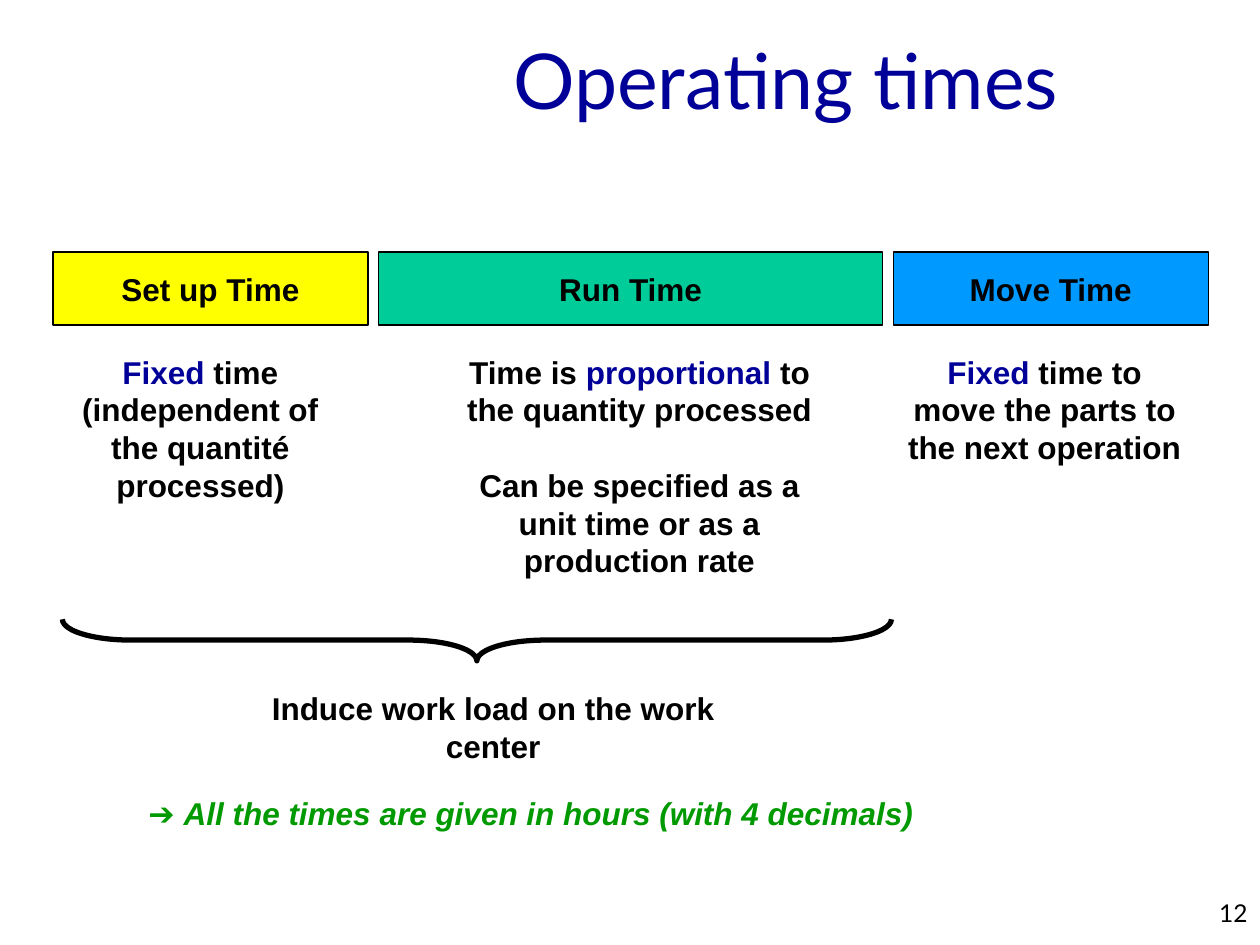
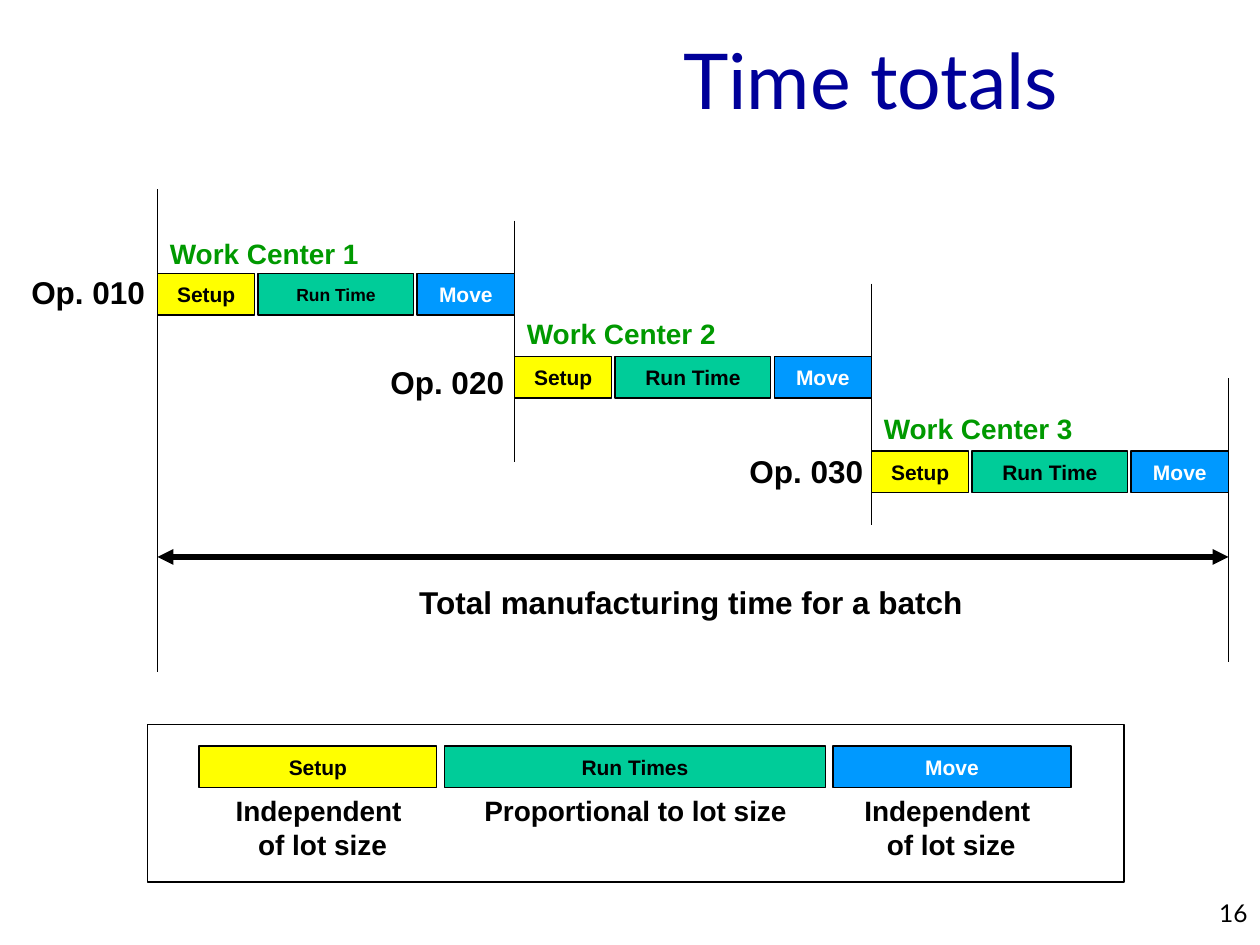
from lxml import etree
from pptx import Presentation
from pptx.dml.color import RGBColor
from pptx.enum.shapes import MSO_CONNECTOR, MSO_SHAPE
from pptx.enum.text import MSO_ANCHOR, PP_ALIGN
from pptx.oxml.ns import qn
from pptx.util import Inches, Pt

LEFT, CENTER, RIGHT = PP_ALIGN.LEFT, PP_ALIGN.CENTER, PP_ALIGN.RIGHT
MIDDLE, TOP = MSO_ANCHOR.MIDDLE, MSO_ANCHOR.TOP
RECTANGLE, LEFT_BRACE = MSO_SHAPE.RECTANGLE, MSO_SHAPE.LEFT_BRACE
STRAIGHT = MSO_CONNECTOR.STRAIGHT

BLACK = RGBColor(0x00, 0x00, 0x00)
WHITE = RGBColor(0xFF, 0xFF, 0xFF)
NAVY = RGBColor(0x00, 0x00, 0x99)
GREEN = RGBColor(0x00, 0x99, 0x00)
YELLOW = RGBColor(0xFF, 0xFF, 0x00)
TEAL = RGBColor(0x00, 0xCC, 0x99)
BLUE = RGBColor(0x00, 0x99, 0xFF)

TITLE_FONT, BODY_FONT = "Lato", "Arial"
THIN, THICK = 0.75, 3

# Every time bar has the same proportions: setup, run, move
SEGMENT_UNITS = (30, 48, 30)
SEGMENT_FILLS = (YELLOW, TEAL, BLUE)
GAP_UNITS = 1
BAR_UNITS = sum(SEGMENT_UNITS) + 2 * GAP_UNITS

# Operating times: each paragraph is a list of (text, colour) runs
TIME_NAMES = ("Set up Time", "Run Time", "Move Time")
TIME_NOTES = [  # left, width, height, paragraphs
    (0.5, 2.18, 1.3, [
        [("Fixed", NAVY), (" time", BLACK)],
        [("(independent of the quantité processed)", BLACK)]]),
    (3.58, 2.99, 1.9, [
        [("Time is", BLACK), (" proportional", NAVY),
         (" to the quantity processed", BLACK)],
        [("Can be specified as a unit time or as a production rate", BLACK)]]),
    (7.08, 2.42, 1, [
        [("Fixed", NAVY),
         (" time to move the parts to the next operation", BLACK)]]),
]
WORK_LOAD = "Induce work load on the work center"
HOURS_NOTE = [("➔ ", GREEN),
              ("All the times are given in hours (with 4 decimals)", GREEN)]

# Time totals
OPERATIONS = [  # label, label top, work center, its top, bar top, run size
    ("Op. 010", 2.12, "Work Center 1", 1.83, 2.17, 10),
    ("Op. 020", 2.83, "Work Center 2", 2.46, 2.83, 12),
    ("Op. 030", 3.54, "Work Center 3", 3.22, 3.58, 12),
]
BOUNDARIES = [(1.5, 5.33), (1.75, 3.67), (2.25, 4.17), (3, 5.25)]
TOTAL_TIME = "Total manufacturing time for a batch"
LEGEND_CAPTIONS = [  # left, width, height, text
    (1.77, 1.58, 0.64, "Independent \vof lot size"),
    (6.76, 1.58, 0.64, "Independent \vof lot size"),
    (3.74, 2.61, 0.37, "Proportional to lot size"),
]
CHAIN_LEFT, CHAIN_RIGHT = 1.25, 9.75
OPERATION_WIDTH = (CHAIN_RIGHT - CHAIN_LEFT) / len(OPERATIONS)


def format_paragraph(paragraph, size, color, align, font=BODY_FONT, bold=True):
    paragraph.alignment = align
    for run in paragraph.runs:
        run.font.name = font
        run.font.size = Pt(size)
        run.font.bold = bold
        run.font.color.rgb = color


def add_box(slide, at, wrap=False, anchor=TOP):
    text_frame = slide.shapes.add_textbox(*map(Inches, at)).text_frame
    text_frame.word_wrap = wrap
    text_frame.vertical_anchor = anchor
    return text_frame


def add_label(slide, at, text, size=18, color=BLACK, align=LEFT):
    paragraph = add_box(slide, at).paragraphs[0]
    paragraph.text = text
    format_paragraph(paragraph, size, color, align)


def fill_runs(paragraph, runs, align):
    for text, _ in runs:
        paragraph.add_run().text = text
    format_paragraph(paragraph, 18, BLACK, align)
    for run, (_, color) in zip(paragraph.runs, runs):
        run.font.color.rgb = color


def add_outlined(shapes, kind, at, fill=None, width=THIN):
    shape = shapes.add_shape(kind, *map(Inches, at))
    shape.shadow.inherit = False
    if fill is None:
        shape.fill.background()
    else:
        shape.fill.solid()
        shape.fill.fore_color.rgb = fill
    shape.line.color.rgb = BLACK
    shape.line.width = Pt(width)
    return shape


def add_time_bar(slide, left, top, width, height, names, sizes, move_color):
    """Draw the three segments of a time bar as one group."""
    shapes = slide.shapes.add_group_shape().shapes
    unit = width / BAR_UNITS
    colors = (BLACK, BLACK, move_color)
    for name, size, color, units, fill in zip(
            names, sizes, colors, SEGMENT_UNITS, SEGMENT_FILLS):
        segment = add_outlined(
            shapes, RECTANGLE, (left, top, units * unit, height), fill)
        text_frame = segment.text_frame
        text_frame.text = name
        text_frame.word_wrap = False
        text_frame.vertical_anchor = MIDDLE
        format_paragraph(text_frame.paragraphs[0], size, color, CENTER)
        left += (units + GAP_UNITS) * unit


def add_line(slide, x1, y1, x2, y2, width=THIN, arrows=False):
    line = slide.shapes.add_connector(STRAIGHT, *map(Inches, (x1, y1, x2, y2)))
    line.line.color.rgb = BLACK
    line.line.width = Pt(width)
    properties = line.element.spPr
    etree.SubElement(properties, qn("a:effectLst"))
    if arrows:
        outline = properties.find(qn("a:ln"))
        for end in ("a:headEnd", "a:tailEnd"):
            etree.SubElement(outline, qn(end), type="triangle")


def start_slide(presentation, title, number):
    slide = presentation.slides.add_slide(presentation.slide_layouts[6])
    for text, at, size, color, anchor in (
            (number, (7.92, 7.08, 2.08, 0.25), 14, BLACK, TOP),
            (title, (0, 0, 8.5, 1.25), 44, NAVY, MIDDLE)):
        text_frame = add_box(slide, at, True, anchor)
        text_frame.text = text
        format_paragraph(text_frame.paragraphs[0], size, color, RIGHT,
                         TITLE_FONT, False)
    return slide


def build_operating_times(presentation):
    slide = start_slide(presentation, "Operating times", "12")
    add_time_bar(slide, 0.42, 2, 9.17, 0.58, TIME_NAMES, (18, 18, 18), BLACK)

    # Explanations under the bar
    for left, width, height, paragraphs in TIME_NOTES:
        text_frame = add_box(slide, (left, 2.75, width, height), wrap=True)
        for index, runs in enumerate(paragraphs):
            paragraph = (text_frame.add_paragraph() if index
                         else text_frame.paragraphs[0])
            fill_runs(paragraph, runs, CENTER)
    # One line of space before the remark on how run time is specified
    run_note = slide.shapes[-2].text_frame
    run_note.paragraphs[1].space_before = Pt(21.5)

    # Brace over the times that load the work center
    brace = add_outlined(slide.shapes, LEFT_BRACE, (3.62, 1.79, 0.33, 6.58),
                         width=THICK)
    brace.rotation = 270
    brace.adjustments[0] = 1.646
    add_label(slide, (1.65, 5.42, 4.53, 0.4), WORK_LOAD, align=CENTER)

    hours = add_box(slide, (1.08, 6.25, 6.33, 0.4)).paragraphs[0]
    fill_runs(hours, HOURS_NOTE, LEFT)
    hours.runs[1].font.italic = True


def build_time_totals(presentation):
    slide = start_slide(presentation, "Time totals", "16")

    # One step of the staircase per operation
    for index, operation in enumerate(OPERATIONS):
        label, label_top, center, center_top, bar_top, run_size = operation
        left = CHAIN_LEFT + index * OPERATION_WIDTH
        add_time_bar(slide, left, bar_top, OPERATION_WIDTH, 0.33,
                     ("Setup", "Run Time", "Move"), (12, run_size, 12), WHITE)
        add_label(slide, (0.15 + 2.85 * index, label_top, 1.1, 0.4), label)
        add_label(slide, (left, center_top, 1.71, 0.37), center, 16, GREEN)

    # Boundaries and total time
    for index, (top, bottom) in enumerate(BOUNDARIES):
        x = CHAIN_LEFT + index * OPERATION_WIDTH
        add_line(slide, x, top, x, bottom)
    add_line(slide, CHAIN_LEFT, 4.42, CHAIN_RIGHT, 4.42, THICK, arrows=True)
    add_label(slide, (3.22, 4.58, 4.53, 0.4), TOTAL_TIME, align=CENTER)

    # Legend
    add_time_bar(slide, 1.58, 5.92, 6.92, 0.33,
                 ("Setup", "Run Times", "Move"), (12, 12, 12), WHITE)
    for left, width, height, text in LEGEND_CAPTIONS:
        add_label(slide, (left, 6.25, width, height), text, 16, align=CENTER)
    add_outlined(slide.shapes, RECTANGLE, (1.17, 5.75, 7.75, 1.25))


def main():
    presentation = Presentation()
    presentation.slide_width = Inches(10)
    presentation.slide_height = Inches(7.5)
    build_operating_times(presentation)
    build_time_totals(presentation)
    presentation.save("out.pptx")


if __name__ == "__main__":
    main()
